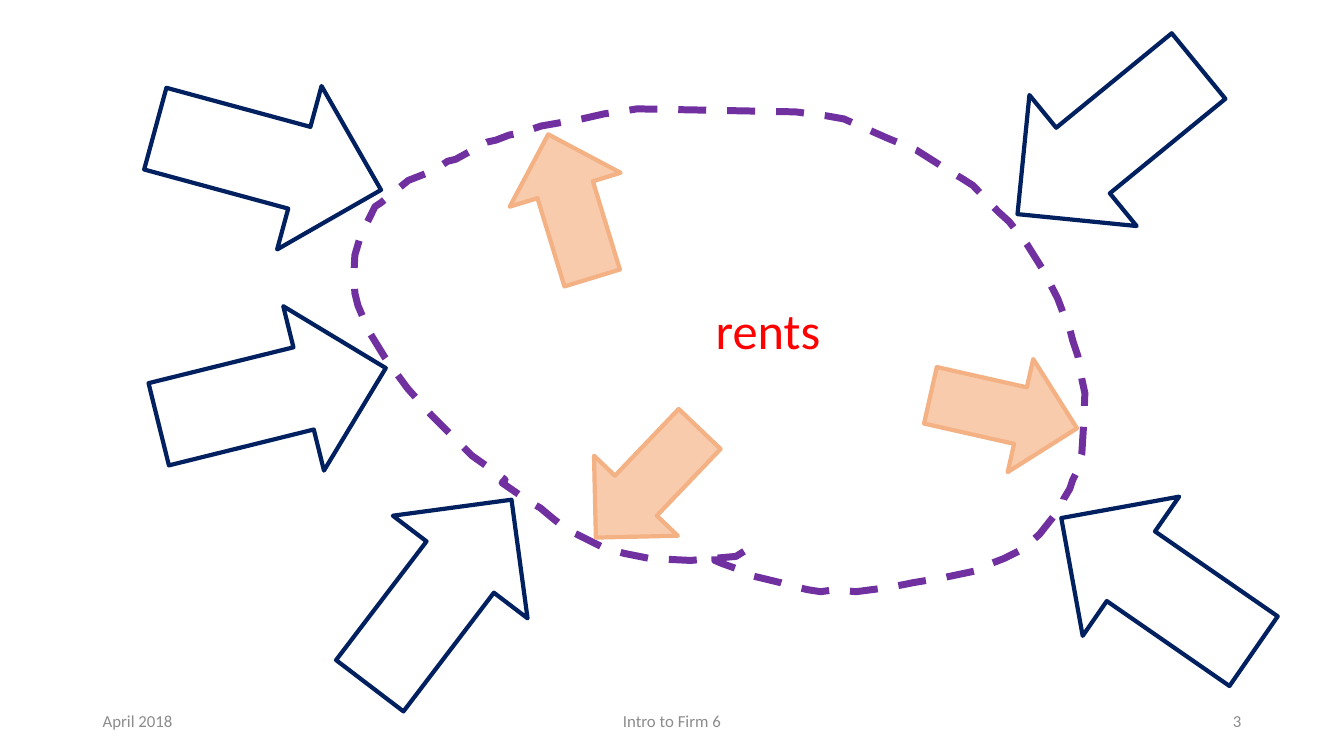
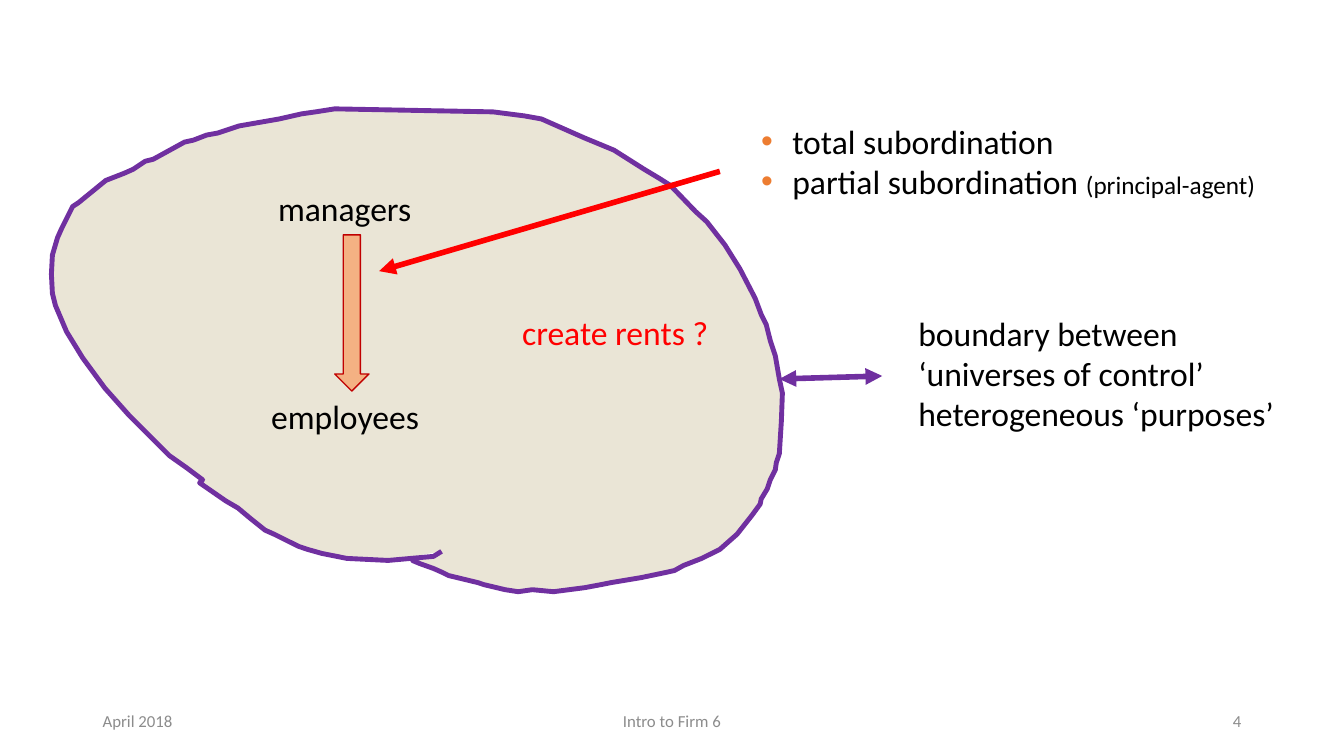
import pptx
import pptx.util
import pptx.dml.color
import pptx.enum.dml
import pptx.enum.shapes
import pptx.enum.text
from pptx.oxml.ns import qn
from lxml import etree

Inches, Pt = pptx.util.Inches, pptx.util.Pt
SHAPE = pptx.enum.shapes.MSO_SHAPE
ALIGN = pptx.enum.text.PP_ALIGN
ANCHOR = pptx.enum.text.MSO_ANCHOR

W, H = 13.33, 7.5
FONT = "Calibri"
COLORS = {
    "text": "000000", "footer": "8C8C8C", "accent": "FF0000",
    "boundary": "7030A0", "firm": "806000", "outside": "002060",
    "inside": "F8CBAD", "inside_edge": "F4B183", "command_edge": "C00000",
    "bullet": "ED7D31",
}
FOOTER = {"top": 6.95, "height": 0.4, "size": 12}

# Firm outline in hundredths of an inch from the corner of its box
OUTLINE = [
    (387, 439), (379, 444), (334, 448), (293, 446), (283, 444), (268, 441),
    (254, 437), (245, 434), (221, 422), (212, 418), (197, 406), (185, 396),
    (173, 389), (147, 371), (150, 368), (134, 356), (117, 344), (77, 304),
    (53, 277), (31, 247), (15, 221), (4, 195), (1, 183), (0, 164), (1, 145),
    (6, 128), (10, 119), (21, 97), (27, 93), (54, 71), (72, 64), (81, 60),
    (93, 52), (101, 50), (132, 33), (141, 31), (154, 26), (165, 24),
    (186, 17), (226, 10), (248, 5), (262, 3), (281, 0), (438, 3), (469, 7),
    (486, 10), (529, 29), (546, 36), (558, 41), (588, 60), (603, 69),
    (614, 76), (639, 102), (650, 112), (668, 135), (683, 159), (698, 188),
    (704, 204), (709, 214), (713, 230), (718, 245), (722, 268), (725, 282),
    (724, 310), (722, 342), (719, 351), (718, 358), (713, 368), (710, 377),
    (704, 387), (703, 392), (695, 403), (680, 422), (663, 437), (645, 446),
    (627, 453), (618, 458), (609, 460), (585, 465), (555, 470), (545, 472),
    (529, 475), (498, 479), (477, 477), (463, 479), (450, 477), (429, 472),
    (423, 470), (394, 463), (388, 460), (379, 456), (365, 451), (358, 448),
    (358, 444),
]

# Arrow families: size, colours, and (left, top, rotation) of each arrow
PRESSURES = {
    "size": (2.32, 1.68), "fill": None, "line": "outside",
    "places": [(9.83, 0.55, 320.7), (1.5, 0.74, 195.2), (1.54, 3.09, 166.1),
               (3.21, 5.04, 127.3), (10.32, 4.96, 34.7)],
}
RESPONSES = {
    "size": (1.49, 1.15), "fill": "inside", "line": "inside_edge",
    "places": [(9.21, 3.51, 192.7), (5.68, 4.22, 313.7), (4.91, 1.47, 73)],
}


def rgb(name):
    return pptx.dml.color.RGBColor.from_string(COLORS[name])


def apply(obj, values):
    for key, value in values.items():
        setattr(obj, key, value)


def box_of(left, top, width, height):
    return [Inches(v) for v in (left, top, width, height)]


def style(sp, fill, line, width):
    sp.shadow.inherit = False
    if fill:
        sp.fill.solid()
        sp.fill.fore_color.rgb = rgb(fill)
    else:
        sp.fill.background()
    sp.line.color.rgb = rgb(line)
    sp.line.width = Pt(width)


def add_text(s, box, paragraphs, size=24, color="text", align=ALIGN.LEFT,
             anchor=ANCHOR.TOP, wrap=False):
    """Each paragraph is a list of (text, size) runs or one string."""
    sp = s.shapes.add_textbox(*box_of(*box))
    tf = sp.text_frame
    apply(tf, {"word_wrap": wrap, "vertical_anchor": anchor})
    for i, runs in enumerate(paragraphs):
        p = tf.paragraphs[0] if i == 0 else tf.add_paragraph()
        p.alignment = align
        for text, pt in [(runs, size)] if isinstance(runs, str) else runs:
            r = p.add_run()
            r.text = text
            apply(r.font, {"name": FONT, "size": Pt(pt)})
            r.font.color.rgb = rgb(color)
    return tf


def add_bullets(tf, indent=0.31):
    for p in tf.paragraphs:
        pPr = p._p.get_or_add_pPr()
        pPr.set("marL", str(Inches(indent)))
        pPr.set("indent", str(-Inches(indent)))
        buClr = etree.SubElement(pPr, qn("a:buClr"))
        etree.SubElement(buClr, qn("a:srgbClr"), val=COLORS["bullet"])
        etree.SubElement(pPr, qn("a:buFont"), typeface="Arial")
        etree.SubElement(pPr, qn("a:buChar"), char="•")


def add_arrow_line(s, start, end, color, ends):
    points = [Inches(v) for v in (*start, *end)]
    cn = s.shapes.add_connector(
        pptx.enum.shapes.MSO_CONNECTOR.STRAIGHT, *points)
    cn.line.color.rgb = rgb(color)
    cn.line.width = Pt(4)
    ln = cn.line._get_or_add_ln()
    for end_tag in ends:
        etree.SubElement(ln, qn(end_tag), type="triangle")
    etree.SubElement(cn._element.spPr, qn("a:effectLst"))


def add_boundary(s, left, top, width, fill=None, alpha=None, dash=None):
    fb = s.shapes.build_freeform(*OUTLINE[0], scale=Inches(0.01))
    fb.add_line_segments(OUTLINE[1:], close=False)
    sp = fb.convert_to_shape(Inches(left), Inches(top))
    style(sp, fill, "boundary", width)
    if dash:
        sp.line.dash_style = dash
    if alpha:
        clr = sp._element.spPr.find(qn("a:solidFill"))[0]
        etree.SubElement(clr, qn("a:alpha"), val=str(alpha * 1000))


def add_arrows(s, family):
    for left, top, rotation in family["places"]:
        sp = s.shapes.add_shape(
            SHAPE.LEFT_ARROW, *box_of(left, top, *family["size"]))
        style(sp, family["fill"], family["line"], 3)
        sp.rotation = rotation


def add_footer(s, number):
    margin, side, middle = 0.92, 3, 4.5
    parts = [
        (margin, side, "April 2018", ALIGN.LEFT),
        ((W - middle) / 2, middle, "Intro to Firm 6", ALIGN.CENTER),
        (W - margin - side, side, str(number), ALIGN.RIGHT),
    ]
    for left, width, text, align in parts:
        add_text(s, (left, FOOTER["top"], width, FOOTER["height"]), [text],
                 FOOTER["size"], "footer", align, ANCHOR.MIDDLE, True)


def new_slide(prs, number):
    s = prs.slides.add_slide(prs.slide_layouts[6])
    add_footer(s, number)
    return s


def add_hierarchy(s, left, top):
    """Managers above employees, joined by a command arrow."""
    add_text(s, (left + 0.07, top, 1.54, 0.5), ["managers"])
    add_text(s, (left, top + 2.06, 1.68, 0.5), ["employees"])
    sp = s.shapes.add_shape(
        SHAPE.DOWN_ARROW, *box_of(left + 0.73, top + 0.51, 0.34, 1.55))
    style(sp, "inside_edge", "command_edge", 1)


def rents_slide(prs):
    s = new_slide(prs, 3)
    add_boundary(s, 3.51, 1.08, 5, dash=pptx.enum.dml.MSO_LINE.DASH)
    for family in (RESPONSES, PRESSURES):
        add_arrows(s, family)
    add_text(s, (7, 2.92, 1.25, 0.71), ["rents"], 36, "accent")


def subordination_slide(prs):
    s = new_slide(prs, 4)
    # Firm and what happens inside it
    add_boundary(s, 0.51, 1.08, 3.5, fill="firm", alpha=16)
    add_hierarchy(s, 2.59, 1.82)
    add_text(s, (5.08, 3.05, 2.07, 0.5), ["create rents ?"], color="accent")
    # Kinds of subordination
    tf = add_text(s, (7.45, 1.15, 5.61, 0.91), [
        "total subordination",
        [("partial subordination ", 24), ("(principal-agent)", 18)],
    ], wrap=True)
    add_bullets(tf)
    add_arrow_line(s, (7.14, 1.7), (3.76, 2.69), "accent", ["a:tailEnd"])
    # Meaning of the boundary
    add_text(s, (9.01, 3.05, 3.92, 1.31), [
        "boundary between ‘universes of control’",
        "heterogeneous ‘purposes’",
    ], wrap=True)
    add_arrow_line(s, (8.75, 3.73), (7.73, 3.76), "boundary",
                   ["a:headEnd", "a:tailEnd"])


def main():
    prs = pptx.Presentation()
    apply(prs, {"slide_width": Inches(W), "slide_height": Inches(H)})
    rents_slide(prs)
    subordination_slide(prs)
    prs.save("out.pptx")


if __name__ == "__main__":
    main()
